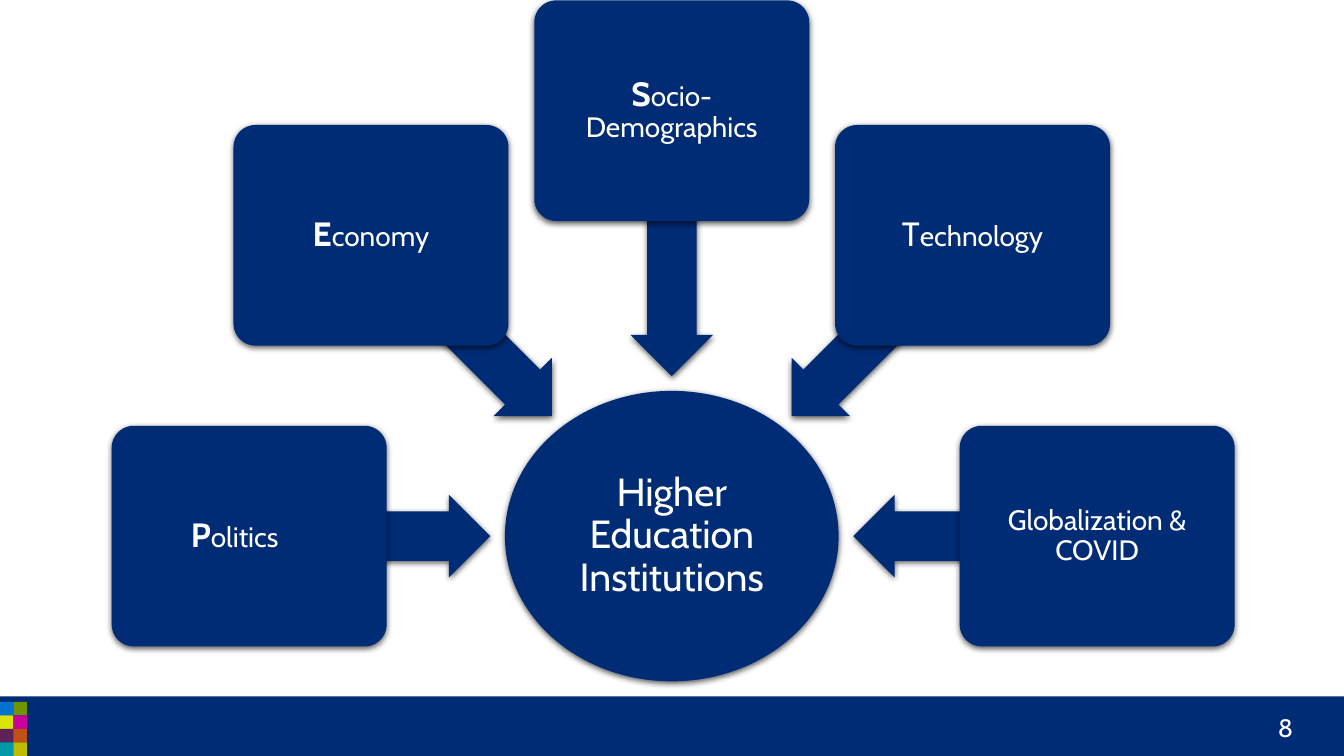
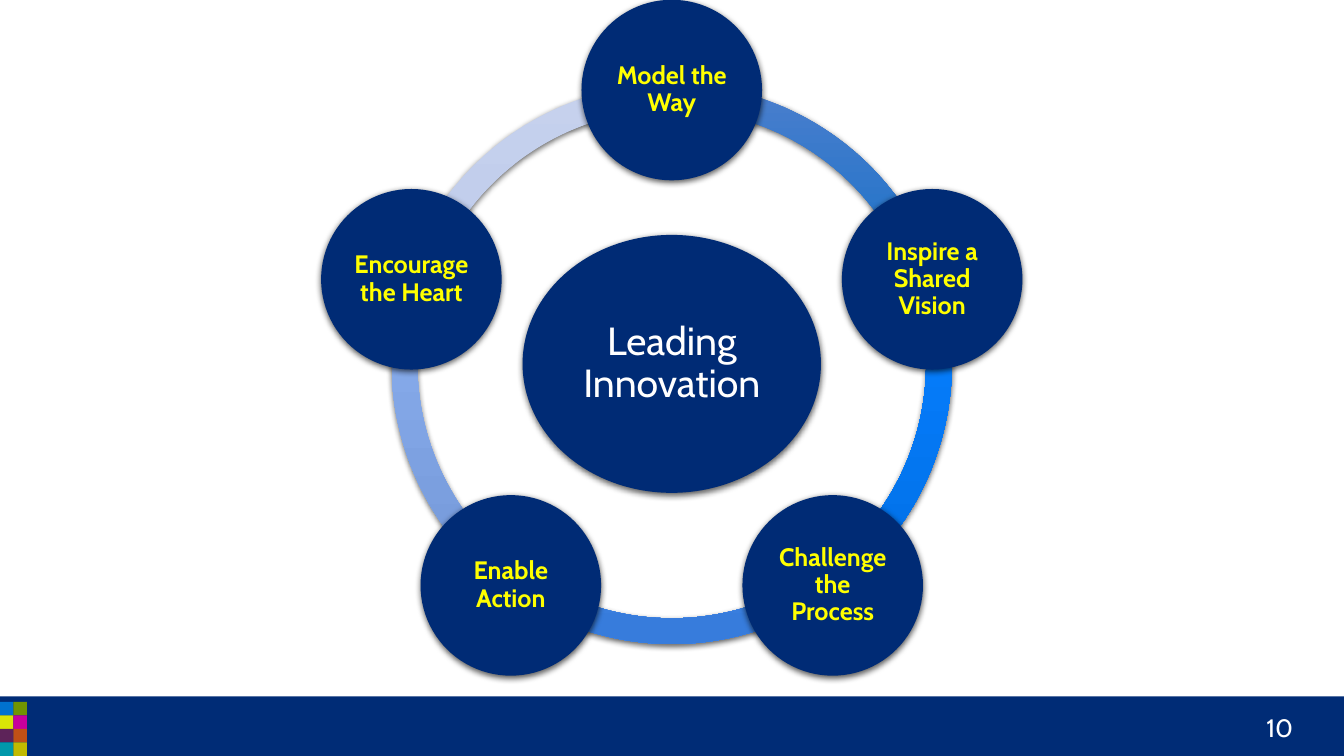
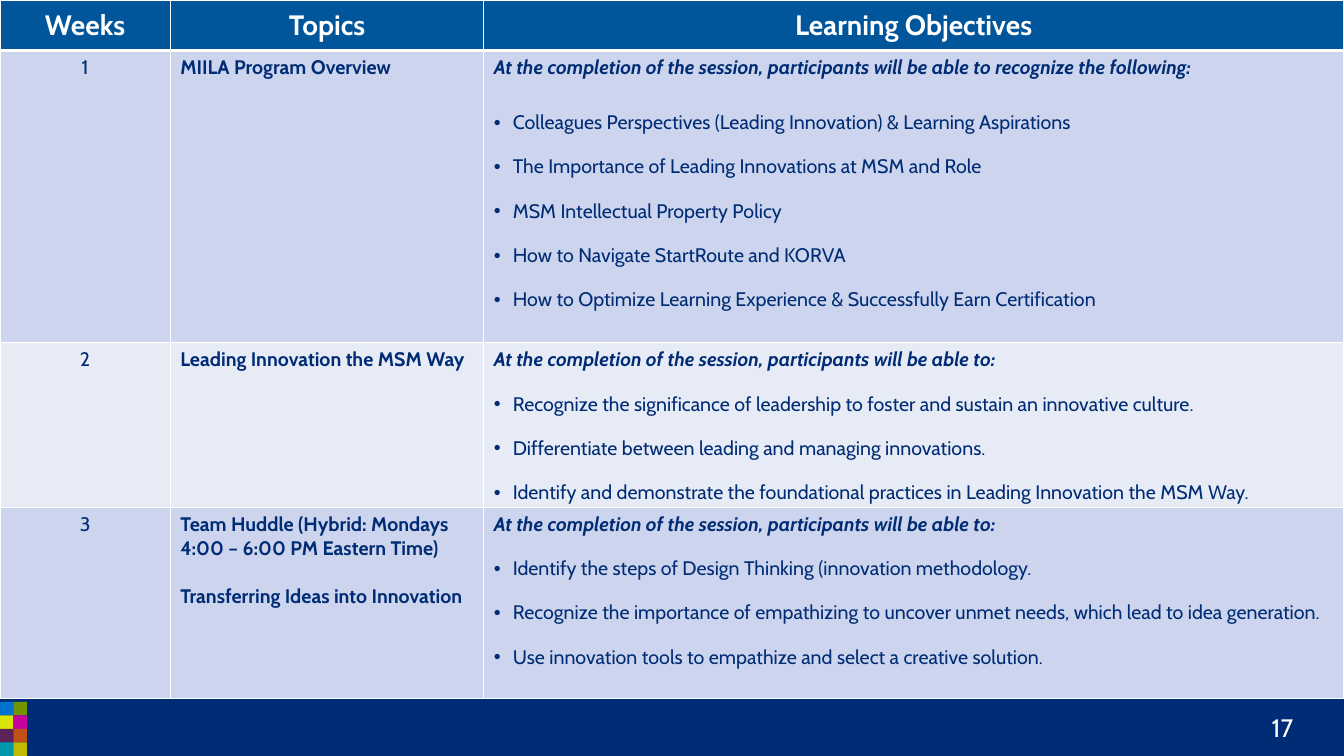
from math import cos, hypot, radians, sin

from pptx import Presentation
from pptx.dml.color import RGBColor
from pptx.enum.shapes import MSO_SHAPE as Preset
from pptx.enum.text import MSO_ANCHOR as Anchor, PP_ALIGN as Align
from pptx.oxml import parse_xml
from pptx.oxml.ns import nsdecls, qn
from pptx.util import Cm, Pt

FONT = "Cabin"
NAVY, BAND, WHITE, YELLOW = "002B75", "002C76", "FFFFFF", "FFFF00"
HEADER_BLUE, PALE, PALER = "00559B", "CCD5ED", "E7EBF6"
WIDTH, HEIGHT = 33.87, 19.05
BAND_TOP = 17.55
TILE = 0.34
MOSAIC = [
    ("0072CF", "709500"),
    ("D9E507", "C8009C"),
    ("5D2359", "C05016"),
    ("0098AA", "C1BB00"),
]

INSTITUTIONS = "Higher Education Institutions"
FORCES = [
    {"initial": "P", "rest": "olitics", "bold": True, "angle": 180, "distance": 10.65, "indent": 0.73},
    {"initial": "E", "rest": "conomy", "bold": True, "angle": 135, "distance": 10.72, "indent": 0},
    {"initial": "S", "rest": "ocio-Demographics", "bold": True, "angle": 90, "distance": 10.72, "indent": 0},
    {"initial": "T", "rest": "echnology", "bold": False, "angle": 45, "distance": 10.72, "indent": 0},
    {"initial": "", "rest": "Globalization & COVID", "bold": False, "angle": 0, "distance": 10.72, "indent": 0},
]

INNOVATION = "Leading Innovation"
PRACTICES = [
    ("Model the Way", ("4B7ECD", "006CC6", "0060B0")),
    ("Inspire a Shared Vision", ("4C8AF3", "057BF9", "006DE1")),
    ("Challenge the Process", ("699BEA", "488DEE", "377CDC")),
    ("Enable Action", ("98B4E8", "84A8E8", "7094D4")),
    ("Encourage the Heart", ("C6D1ED", "B9C8EB", "A1B0D4")),
]

HEADINGS = ["Weeks", "Topics", "Learning Objectives"]
COLUMN_WIDTHS = [4.29, 7.9, 21.67]
ROW_HEIGHTS = [1.27, 7.37, 4.14, 4.8]
WEEKS = [
    (
        ["MIILA Program Overview"],
        "At the completion of the session, participants will be able to recognize the following:",
        8,
        [
            "Colleagues Perspectives (Leading Innovation) & Learning Aspirations",
            "The Importance of Leading Innovations at MSM and Role",
            "MSM Intellectual Property Policy",
            "How to Navigate StartRoute and KORVA",
            "How to Optimize Learning Experience & Successfully Earn Certification",
        ],
    ),
    (
        ["Leading Innovation the MSM Way"],
        "At the completion of the session, participants will be able to:",
        0,
        [
            "Recognize the significance of leadership to foster and sustain an innovative culture.",
            "Differentiate between leading and managing innovations.",
            "Identify and demonstrate the foundational practices in Leading Innovation the MSM Way.",
        ],
    ),
    (
        [
            "Team Huddle (Hybrid: Mondays 4:00 – 6:00 PM Eastern Time)",
            "Transferring Ideas into Innovation",
        ],
        "At the completion of the session, participants will be able to:",
        0,
        [
            "Identify the steps of Design Thinking (innovation methodology.",
            "Recognize the importance of empathizing to uncover unmet needs, which lead to idea generation.",
            "Use innovation tools to empathize and select a creative solution.",
        ],
    ),
]


def rgb(color):
    return RGBColor.from_string(color)


def style(paragraph, size, color, align=Align.LEFT, bold=False, italic=False):
    paragraph.alignment = align
    font = paragraph.font
    font.name, font.size, font.bold, font.italic = FONT, Pt(size), bold, italic
    font.color.rgb = rgb(color)


def add_preset(slide, preset, left, top, width, height, color=None):
    shape = slide.shapes.add_shape(preset, Cm(left), Cm(top), Cm(width), Cm(height))
    shape.shadow.inherit = False
    shape.line.fill.background()
    if color:
        shape.fill.solid()
        shape.fill.fore_color.rgb = rgb(color)
    return shape


def add_raised(slide, preset, center, size, color=None):
    (x, y), (width, height) = center, size
    shape = add_preset(slide, preset, x - width / 2, y - height / 2, width, height, color)
    shape.element.spPr.find(qn("a:effectLst")).append(parse_xml(
        f'<a:outerShdw {nsdecls("a")} blurRad="57150" dist="19050" dir="5400000" '
        'algn="ctr" rotWithShape="0"><a:srgbClr val="000000">'
        '<a:alpha val="63000"/></a:srgbClr></a:outerShdw>'))
    return shape


def write_label(shape, runs, size, color=WHITE, bold=False, margin=0.1, indent=0):
    frame = shape.text_frame
    frame.word_wrap = True
    frame.vertical_anchor = Anchor.MIDDLE
    frame.margin_left = frame.margin_top = frame.margin_bottom = Cm(margin)
    frame.margin_right = Cm(margin + indent)
    paragraph = frame.paragraphs[0]
    paragraph.line_spacing = 0.9
    style(paragraph, size, color, Align.CENTER, bold)
    for text, run_size, run_bold in runs:
        run = paragraph.add_run()
        run.text = text
        if run_size:
            run.font.size, run.font.bold = Pt(run_size), run_bold


def polar(center, distance, angle):
    return (center[0] + distance * cos(radians(angle)),
            center[1] - distance * sin(radians(angle)))


def build_shared_layout(layout, slide):
    parts = [add_preset(slide, Preset.RECTANGLE, 0, BAND_TOP, WIDTH, HEIGHT - BAND_TOP, BAND)]
    mosaic_top = HEIGHT - len(MOSAIC) * TILE
    for row, colors in enumerate(MOSAIC):
        for column, color in enumerate(colors):
            parts.append(add_preset(slide, Preset.RECTANGLE, column * TILE,
                                    mosaic_top + row * TILE, TILE, TILE, color))
    for part in parts:
        layout.shapes.element.append(part.element)


def add_page_number(slide, number):
    frame = slide.shapes.add_textbox(Cm(30.81), Cm(17.7), Cm(2.03), Cm(1.24)).text_frame
    frame.word_wrap = True
    frame.vertical_anchor = Anchor.MIDDLE
    frame.text = str(number)
    style(frame.paragraphs[0], 18, WHITE, Align.RIGHT)


def build_forces(slide):
    center, hub_size, gap = (16.93, 13.51), (8.41, 7.32), 0.37
    hub = add_raised(slide, Preset.OVAL, center, hub_size, NAVY)
    write_label(hub, [(INSTITUTIONS, None, None)], 28, margin=0.05)
    for force in FORCES:
        angle, distance = force["angle"], force["distance"]
        edge = 1 / hypot(2 * cos(radians(angle)) / hub_size[0],
                         2 * sin(radians(angle)) / hub_size[1])
        tip = edge + gap
        arrow = add_raised(slide, Preset.LEFT_ARROW, polar(center, (tip + distance) / 2, angle),
                           (distance - tip, 2.08), NAVY)
        arrow.adjustments[0], arrow.adjustments[1] = 0.6, 0.5
        arrow.rotation = -angle % 360
        box = add_raised(slide, Preset.ROUNDED_RECTANGLE, polar(center, distance, angle),
                         (6.93, 5.56), NAVY)
        box.adjustments[0] = 0.1
        runs = [(force["rest"], None, None)]
        if force["initial"]:
            runs.insert(0, (force["initial"], 24, force["bold"]))
        write_label(box, runs, 20, margin=0.12, indent=force["indent"])


def fill_gradient(shape, colors):
    stops = "".join(f'<a:gs pos="{index * 50000}"><a:srgbClr val="{color}"/></a:gs>'
                    for index, color in enumerate(colors))
    shape.element.spPr.find(qn("a:prstGeom")).addnext(parse_xml(
        f'<a:gradFill {nsdecls("a")} rotWithShape="1"><a:gsLst>{stops}</a:gsLst>'
        '<a:lin ang="5400000" scaled="0"/></a:gradFill>'))


def build_practices(slide):
    center, step = (16.93, 9.17), 360 / len(PRACTICES)
    for index, (_, colors) in reversed(list(enumerate(PRACTICES))):
        arc = add_raised(slide, Preset.BLOCK_ARC, center, (14.12, 14.12))
        start = 270 + index * step
        arc.adjustments[0] = start % 360 * 0.6
        arc.adjustments[1] = (start + step) % 360 * 0.6
        arc.adjustments[2] = 0.046
        fill_gradient(arc, colors)
    hub = add_raised(slide, Preset.OVAL, center, (7.52, 6.5), NAVY)
    write_label(hub, [(INNOVATION, None, None)], 28)
    for index, (practice, _) in enumerate(PRACTICES):
        node = add_raised(slide, Preset.OVAL, polar(center, 6.9, 90 - index * step),
                          (4.55, 4.55), NAVY)
        write_label(node, [(practice, None, None)], 18, YELLOW, True, margin=0.08)


def format_cell(cell, color, top=1, bottom=1):
    properties = cell._tc.get_or_add_tcPr()
    for side, width in zip("LRTB", (1, 1, top, bottom)):
        properties.append(parse_xml(
            f'<a:ln{side} {nsdecls("a")} w="{Pt(width)}"><a:solidFill>'
            f'<a:srgbClr val="{WHITE}"/></a:solidFill></a:ln{side}>'))
    cell.fill.solid()
    cell.fill.fore_color.rgb = rgb(color)


def make_bullet(paragraph):
    paragraph.line_spacing = 1.5
    paragraph.space_before = Pt(6)
    properties = paragraph._p.get_or_add_pPr()
    properties.set("marL", str(Cm(0.48)))
    properties.set("indent", str(-Cm(0.48)))
    properties.append(parse_xml(f'<a:buFont {nsdecls("a")} typeface="Arial"/>'))
    properties.append(parse_xml(f'<a:buChar {nsdecls("a")} char="•"/>'))


def build_schedule(slide):
    table = slide.shapes.add_table(len(ROW_HEIGHTS), len(HEADINGS), 0, 0,
                                   Cm(sum(COLUMN_WIDTHS)), Cm(sum(ROW_HEIGHTS))).table
    for column, width in zip(table.columns, COLUMN_WIDTHS):
        column.width = Cm(width)
    for row, height in zip(table.rows, ROW_HEIGHTS):
        row.height = Cm(height)
    for cell, heading in zip(table.rows[0].cells, HEADINGS):
        format_cell(cell, HEADER_BLUE, bottom=3)
        cell.vertical_anchor = Anchor.MIDDLE
        cell.text = heading
        style(cell.text_frame.paragraphs[0], 20, WHITE, Align.CENTER, True)
    for week, (topics, lead, lead_gap, objectives) in enumerate(WEEKS, 1):
        cells = list(table.rows[week].cells)
        for cell, lines in zip(cells, ([str(week)], topics, [lead, *objectives])):
            format_cell(cell, PALE if week % 2 else PALER, top=3 if week == 1 else 1)
            cell.text = "\n".join(lines)
        number, topic, objective = (cell.text_frame.paragraphs for cell in cells)
        style(number[0], 14, NAVY, Align.CENTER)
        for index, paragraph in enumerate(topic):
            if index:
                paragraph.space_before = Pt(17)
            style(paragraph, 14, NAVY, bold=True)
        objective[0].space_after = Pt(lead_gap)
        style(objective[0], 14, NAVY, bold=True, italic=True)
        for paragraph in objective[1:]:
            make_bullet(paragraph)
            style(paragraph, 14, NAVY)


def main():
    deck = Presentation()
    deck.slide_width, deck.slide_height = Cm(WIDTH), Cm(HEIGHT)
    layout = deck.slide_layouts[6]
    pages = [(8, build_forces), (10, build_practices), (17, build_schedule)]
    for index, (number, build) in enumerate(pages):
        slide = deck.slides.add_slide(layout)
        if index == 0:
            build_shared_layout(layout, slide)
        add_page_number(slide, number)
        build(slide)
    deck.save("out.pptx")


if __name__ == "__main__":
    main()
